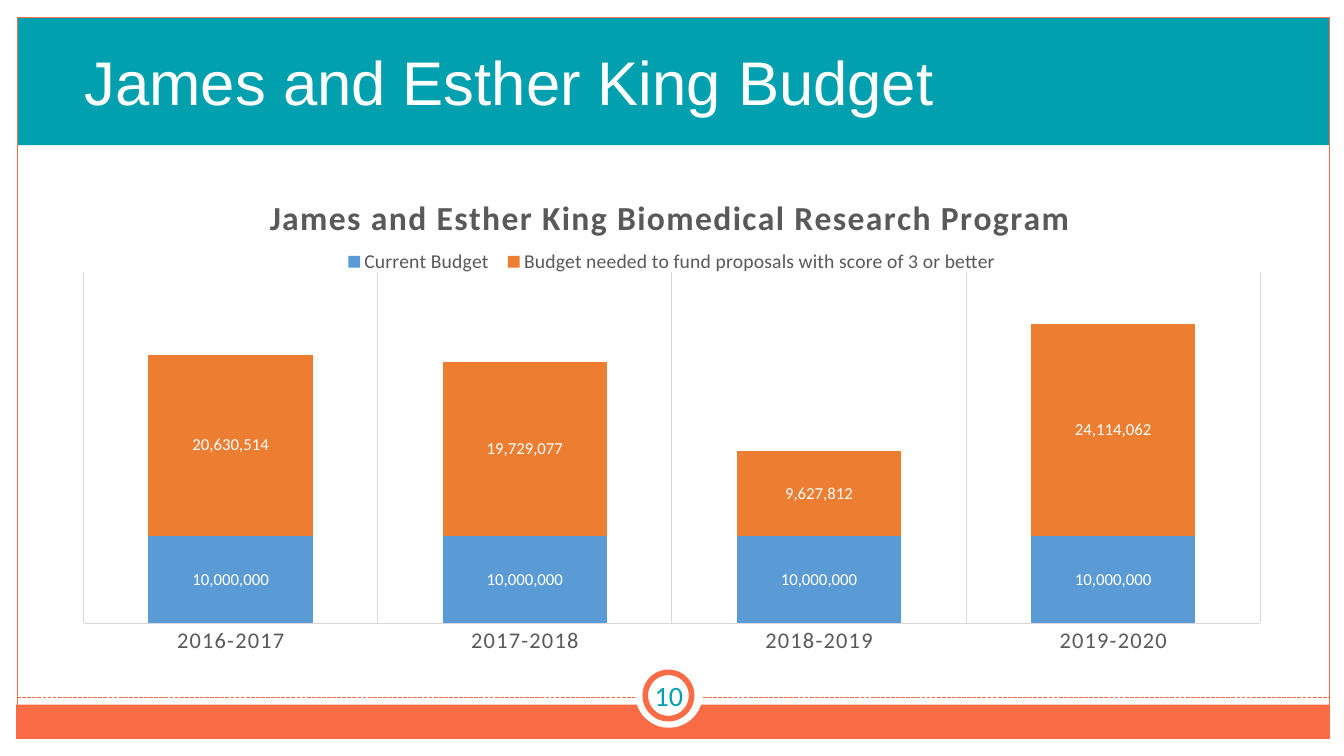
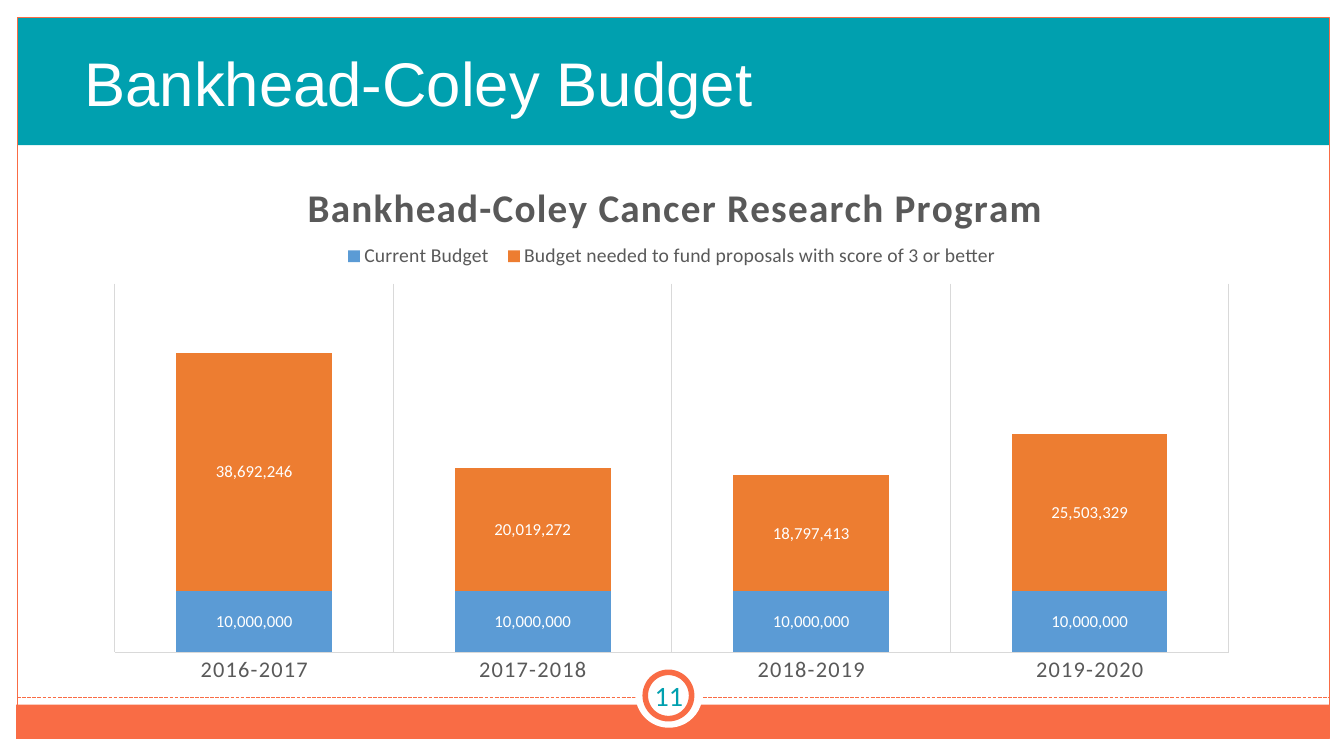
from lxml import etree
from pptx import Presentation, util as u
from pptx.chart import data as chart_data
from pptx.dml import color
from pptx.enum import chart as chart_enum, dml, shapes, text
from pptx.oxml import ns

COLORS = {
    "teal": "00A0AF", "coral": "F96C45", "white": "FFFFFF", "black": "000000",
    "blue": "5B9BD5", "orange": "ED7D31", "gray": "595959", "grid": "D9D9D9",
}
TITLE_FONT, BODY_FONT = "Arial", "Calibri"
YEARS = ["2016-2017", "2017-2018", "2018-2019", "2019-2020"]
CURRENT_BUDGET = 10000000
LETTER_SPACING = "100"

# Layouts are left, top, width, height as fractions of the chart box
BUDGETS = [
    {
        "number": "10",
        "title": "James and Esther King Budget",
        "title_top": 0.26,
        "program": "James and Esther King Biomedical Research Program",
        "program_size": 24,
        "needed": [20630514, 19729077, 9627812, 24114062],
        "axis_max": 40000000,
        "box": (0.71, 1.61, 11.91, 5.2),
        "program_at": (0.16, 0.05),
        "legend_at": (0.22, 0.16, 0.56, 0.06),
        "plot_at": (0.01, 0.21, 0.98, 0.67),
    },
    {
        "number": "11",
        "title": "Bankhead-Coley Budget",
        "title_top": 0.27,
        "program": "Bankhead-Coley Cancer Research Program",
        "program_size": 28,
        "needed": [38692246, 20019272, 18797413, 25503329],
        "axis_max": 60000000,
        "box": (0.91, 1.45, 11.51, 5.46),
        "program_at": (0.18, 0.05),
        "legend_at": (0.21, 0.17, 0.58, 0.06),
        "plot_at": (0.02, 0.25, 0.96, 0.67),
    },
]


def rgb(name):
    return color.RGBColor.from_string(COLORS[name])


def inches(box):
    return [u.Inches(length) for length in box]


def style_font(font, size, color_name, name=BODY_FONT, bold=False):
    font.size, font.name, font.bold = u.Pt(size), name, bold
    font.color.rgb = rgb(color_name)


def style_line(line, color_name, width):
    line.color.rgb = rgb(color_name)
    line.width = u.Pt(width)


def add_shape(slide, kind, box, fill=None, line=None, line_width=0.75):
    shape = slide.shapes.add_shape(kind, *inches(box))
    shape.shadow.inherit = False
    if fill:
        shape.fill.solid()
        shape.fill.fore_color.rgb = rgb(fill)
    else:
        shape.fill.background()
    if line:
        style_line(shape.line, line, line_width)
    else:
        shape.line.fill.background()


def add_label(slide, box, words, size, color_name, font_name, align):
    frame = slide.shapes.add_textbox(*inches(box)).text_frame
    frame.word_wrap = True
    frame.vertical_anchor = text.MSO_ANCHOR.MIDDLE
    paragraph = frame.paragraphs[0]
    paragraph.text = words
    paragraph.alignment = align
    style_font(paragraph.runs[0].font, size, color_name, font_name)
    return paragraph


def add_frame(slide):
    """Title band, footer band, page outline and dashed rule."""
    rectangle = shapes.MSO_SHAPE.RECTANGLE
    add_shape(slide, rectangle, (0.17, 0.18, 13.02, 1.26), fill="teal")
    add_shape(slide, rectangle, (0.16, 6.99, 13.02, 0.34), fill="coral")
    add_shape(slide, rectangle, (0.17, 0.17, 13.02, 7.16), line="coral")
    rule = slide.shapes.add_connector(
        shapes.MSO_CONNECTOR.STRAIGHT, *inches((0.17, 6.92, 13.18, 6.92)))
    style_line(rule.line, "coral", 0.9)
    rule.line.dash_style = dml.MSO_LINE.SQUARE_DOT
    properties = rule.element.find(ns.qn("p:spPr"))
    etree.SubElement(properties, ns.qn("a:effectLst"))


def add_page_badge(slide, number, left=6.21, top=6.55):
    """Ringed circle holding the page number."""
    oval = shapes.MSO_SHAPE.OVAL
    add_shape(slide, oval, (left + 0.09, top, 0.67, 0.67), fill="white")
    add_shape(slide, oval, (left + 0.19, top + 0.12, 0.46, 0.46),
              fill="white", line="coral", line_width=4)
    add_label(slide, (left, top + 0.11, 0.85, 0.48), number, 20, "teal",
              BODY_FONT, text.PP_ALIGN.CENTER)


def set_layout(element, position, fractions, inner=False):
    """Fix the place of a chart part; position is its index in the parent."""
    layout_tag = ns.qn("c:layout")
    for old_layout in element.findall(layout_tag):
        element.remove(old_layout)
    layout = etree.Element(layout_tag)
    element.insert(position, layout)
    manual = etree.SubElement(layout, ns.qn("c:manualLayout"))
    settings = [("layoutTarget", "inner")] if inner else []
    settings += [("xMode", "edge"), ("yMode", "edge")]
    settings += zip("xywh", fractions)
    for tag, value in settings:
        etree.SubElement(manual, ns.qn("c:" + tag)).set("val", str(value))


def add_budget_chart(slide, budget):
    """Stacked columns with heading, top legend and hidden value axis."""
    data = chart_data.CategoryChartData(number_format="#,##0")
    data.categories = YEARS
    data.add_series("Current Budget", [CURRENT_BUDGET] * len(YEARS))
    data.add_series("Budget needed to fund proposals with score of 3 or better",
                    budget["needed"])
    chart = slide.shapes.add_chart(
        chart_enum.XL_CHART_TYPE.COLUMN_STACKED, *inches(budget["box"]), data).chart
    style_font(chart.font, 10, "black")

    # Heading
    chart.has_title = True
    heading = chart.chart_title.text_frame.paragraphs[0]
    heading.text = budget["program"]
    style_font(heading.runs[0].font, budget["program_size"], "gray", bold=True)
    title = chart.element.find(".//" + ns.qn("c:title"))
    title.find(".//" + ns.qn("a:rPr")).set("spc", LETTER_SPACING)
    set_layout(title, 1, budget["program_at"])

    # Legend
    chart.has_legend = True
    chart.legend.position = chart_enum.XL_LEGEND_POSITION.TOP
    chart.legend.include_in_layout = False
    style_font(chart.legend.font, 14, "gray")
    set_layout(chart.element.find(".//" + ns.qn("c:legend")), 1, budget["legend_at"])

    # Axes
    years = chart.category_axis
    years.major_tick_mark = chart_enum.XL_TICK_MARK.NONE
    years.has_major_gridlines = True
    style_line(years.major_gridlines.format.line, "grid", 0.75)
    style_line(years.format.line, "grid", 0.75)
    style_font(years.tick_labels.font, 16, "gray")
    year_axis = chart.element.find(".//" + ns.qn("c:catAx"))
    year_axis.find(".//" + ns.qn("a:defRPr")).set("spc", LETTER_SPACING)
    amounts = chart.value_axis
    amounts.minimum_scale, amounts.maximum_scale = 0, budget["axis_max"]
    amounts.has_major_gridlines = False
    amounts.visible = False

    # Columns and their values
    plot = chart.plots[0]
    plot.gap_width, plot.overlap = 79, 100
    plot.vary_by_categories = False
    for series, fill in zip(plot.series, ("blue", "orange")):
        series.format.fill.solid()
        series.format.fill.fore_color.rgb = rgb(fill)
        labels = series.data_labels
        labels.show_value = True
        labels.position = chart_enum.XL_LABEL_POSITION.CENTER
        labels.number_format, labels.number_format_is_linked = "#,##0", False
        style_font(labels.font, 12, "white")
    set_layout(chart.element.find(".//" + ns.qn("c:plotArea")), 0,
               budget["plot_at"], inner=True)


def add_budget_slide(presentation, budget):
    slide = presentation.slides.add_slide(presentation.slide_layouts[6])
    add_frame(slide)
    add_page_badge(slide, budget["number"])
    title = add_label(slide, (0.74, budget["title_top"], 11.91, 1.18),
                      budget["title"], 44, "white", TITLE_FONT, text.PP_ALIGN.LEFT)
    title.line_spacing = 0.9
    add_budget_chart(slide, budget)


def main():
    presentation = Presentation()
    presentation.slide_width = u.Inches(13.33)
    presentation.slide_height = u.Inches(7.5)
    for budget in BUDGETS:
        add_budget_slide(presentation, budget)
    presentation.save("out.pptx")


if __name__ == "__main__":
    main()
